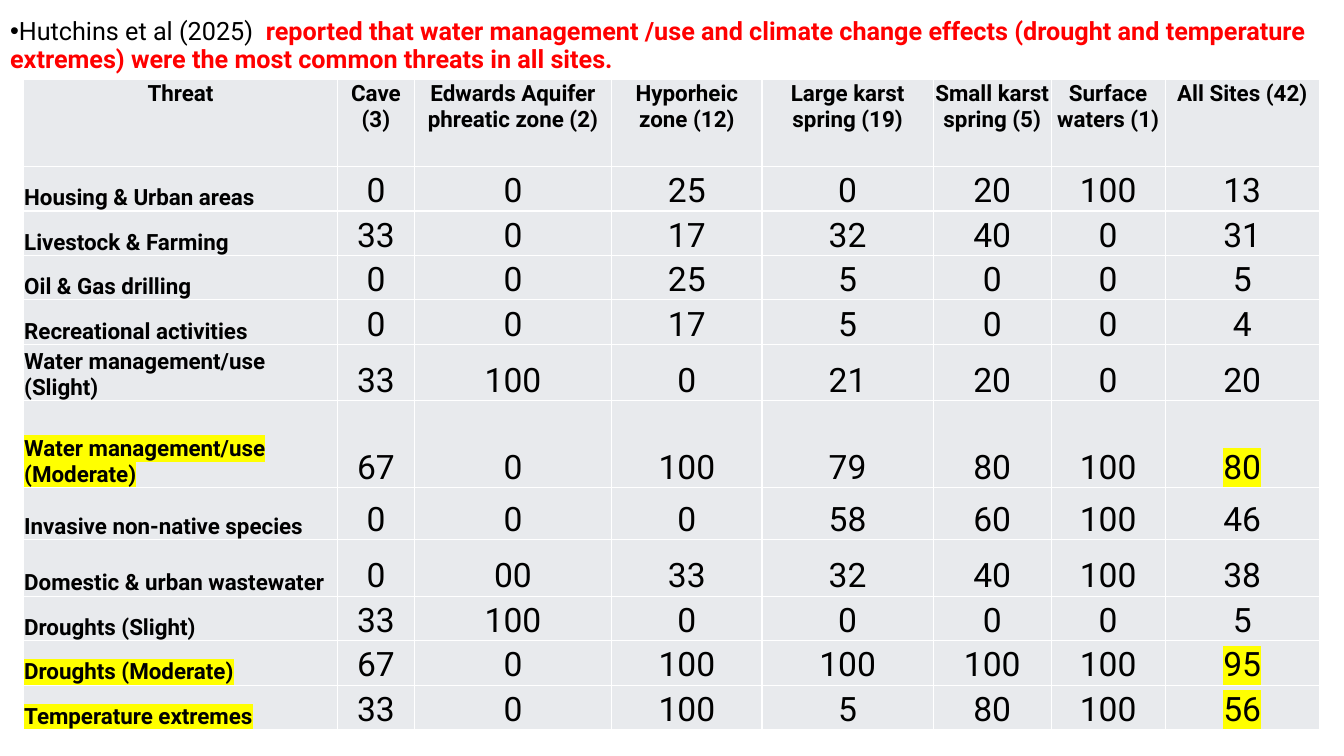
from pptx import Presentation
from pptx.dml.color import RGBColor
from pptx.enum import text
from pptx.oxml import ns
from pptx.util import Pt
from lxml import etree

CITATION = "Hutchins et al (2025)  "
FINDING = ("reported that water management /use and climate change effects (drought and "
           "temperature extremes) were the most common threats in all sites.")

# heading, column width
COLUMNS = [
    ("Threat", 224.6), ("Cave (3)", 54.7), ("Edwards Aquifer phreatic zone (2)", 141.1),
    ("Hyporheic zone (12)", 107.3), ("Large karst spring (19)", 122.4),
    ("Small karst spring (5)", 84.2), ("Surface waters (1)", 81.4), ("All Sites (42)", 110.2),
]
LOW, MIDDLE, HIGH, TALL = 31.8, 37.4, 40.3, 61.9
# threat, percentages by site type, row height
THREATS = [
    ("Housing & Urban areas", "0 0 25 0 20 100 13", LOW),
    ("Livestock & Farming", "33 0 17 32 40 0 31", LOW),
    ("Oil & Gas drilling", "0 0 25 5 0 0 5", LOW),
    ("Recreational activities", "0 0 17 5 0 0 4", LOW),
    ("Water management/use (Slight)", "33 100 0 21 20 0 20", HIGH),
    ("Water management/use (Moderate)", "67 0 100 79 80 100 80", TALL),
    ("Invasive non-native species", "0 0 0 58 60 100 46", MIDDLE),
    ("Domestic & urban wastewater", "0 00 33 32 40 100 38", HIGH),
    ("Droughts (Slight)", "33 100 0 0 0 0 5", LOW),
    ("Droughts (Moderate)", "67 0 100 100 100 100 95", LOW),
    ("Temperature extremes", "33 0 100 5 80 100 56", LOW),
]
MOST_COMMON = {"Water management/use (Moderate)", "Droughts (Moderate)", "Temperature extremes"}

THEME = {
    "font": "Roboto", "ink": "000000", "alert": "FF0000", "cell": "E8EAED",
    "rule": "FFFFFF", "highlight": "FFFF00",
    "statement": Pt(18), "label": Pt(16), "value": Pt(24),
}
STATEMENT_BOX = {"left": Pt(0), "top": Pt(10), "width": Pt(952), "height": Pt(47)}
TABLE_LEFT, TABLE_TOP = Pt(16.6), Pt(57)
CELL_MARGINS = {"margin_left": Pt(0.7), "margin_right": Pt(0.7),
                "margin_top": Pt(0.7), "margin_bottom": Pt(0)}


def set_all(target, values):
    for name, value in values.items():
        setattr(target, name, value)


def add_color(parent, tag, color):
    element = etree.SubElement(parent, ns.qn(tag))
    etree.SubElement(element, ns.qn("a:srgbClr"), val=color)
    return element


def add_run(paragraph, words, size, bold, color, highlighted=False):
    run = paragraph.add_run()
    run.text = words
    set_all(run.font, {"name": THEME["font"], "size": size, "bold": bold})
    run.font.color.rgb = RGBColor.from_string(color)
    if highlighted:
        properties = run.font.fill._xPr
        mark = add_color(properties, "a:highlight", THEME["highlight"])
        properties.find(ns.qn("a:solidFill")).addnext(mark)


def add_borders(cell):
    properties = cell._tc.get_or_add_tcPr()
    for side in ("a:lnL", "a:lnR", "a:lnT", "a:lnB"):
        line = etree.SubElement(properties, ns.qn(side), w=str(Pt(1)))
        add_color(line, "a:solidFill", THEME["rule"])


def fill_cell(cell, words, is_header, is_label, highlighted):
    set_all(cell, CELL_MARGINS)
    cell.vertical_anchor = text.MSO_ANCHOR.TOP if is_header else text.MSO_ANCHOR.BOTTOM
    add_borders(cell)
    cell.fill.solid()
    cell.fill.fore_color.rgb = RGBColor.from_string(THEME["cell"])
    paragraph = cell.text_frame.paragraphs[0]
    left_aligned = is_label and not is_header
    paragraph.alignment = text.PP_ALIGN.LEFT if left_aligned else text.PP_ALIGN.CENTER
    bold = is_header or is_label
    size = THEME["label"] if bold else THEME["value"]
    add_run(paragraph, words, size, bold, THEME["ink"], highlighted)


def add_threat_table(slide):
    rows = [([heading for heading, _ in COLUMNS], TALL)]
    rows += [([threat, *values.split()], height) for threat, values, height in THREATS]
    total_width = Pt(sum(width for _, width in COLUMNS))
    total_height = Pt(sum(height for _, height in rows))
    table = slide.shapes.add_table(len(rows), len(COLUMNS), TABLE_LEFT, TABLE_TOP,
                                   total_width, total_height).table
    set_all(table, {"first_row": False, "horz_banding": False})
    for column, (_, width) in zip(table.columns, COLUMNS):
        column.width = Pt(width)
    last = len(COLUMNS) - 1
    for row_index, (row, (entries, height)) in enumerate(zip(table.rows, rows)):
        row.height = Pt(height)
        for index, (cell, words) in enumerate(zip(row.cells, entries)):
            highlighted = entries[0] in MOST_COMMON and index in (0, last)
            fill_cell(cell, words, row_index == 0, index == 0, highlighted)


def add_statement(slide):
    title, body = slide.placeholders
    title.element.getparent().remove(title.element)
    set_all(body, STATEMENT_BOX)
    set_all(body.text_frame, {"word_wrap": True, "vertical_anchor": text.MSO_ANCHOR.TOP,
                              "auto_size": text.MSO_AUTO_SIZE.SHAPE_TO_FIT_TEXT})
    paragraph = body.text_frame.paragraphs[0]
    set_all(paragraph, {"line_spacing": 0.9, "space_before": Pt(0), "space_after": Pt(6)})
    properties = paragraph._p.get_or_add_pPr()
    properties.set("marL", "0")
    properties.set("indent", str(-Pt(18)))
    etree.SubElement(properties, ns.qn("a:buChar"), char="•")
    add_run(paragraph, CITATION, THEME["statement"], False, THEME["ink"])
    add_run(paragraph, FINDING, THEME["statement"], True, THEME["alert"])


def main():
    presentation = Presentation()
    set_all(presentation, {"slide_width": Pt(960), "slide_height": Pt(540)})
    slide = presentation.slides.add_slide(presentation.slide_layouts[1])
    add_threat_table(slide)
    add_statement(slide)
    presentation.save("out.pptx")


if __name__ == "__main__":
    main()
